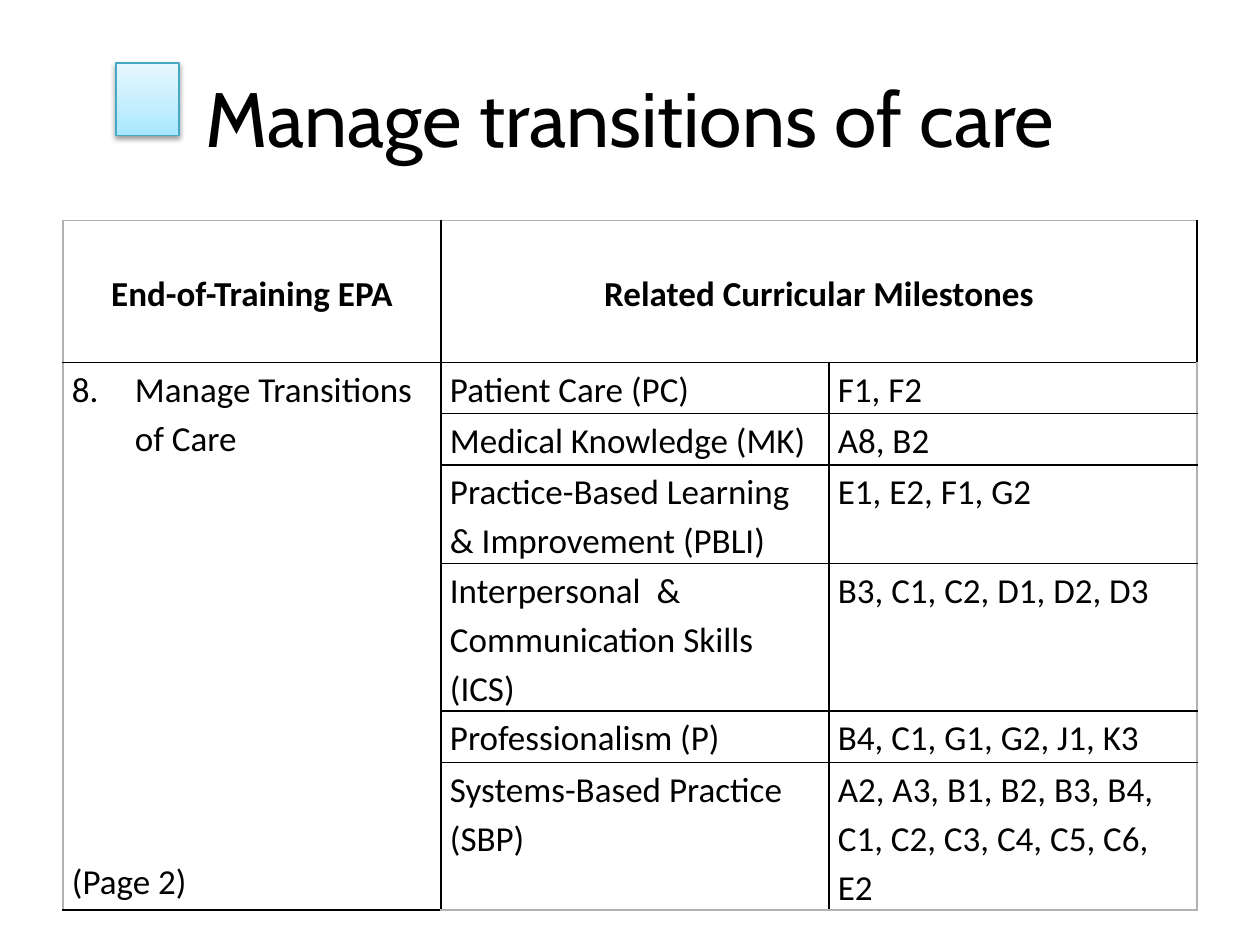
from dataclasses import dataclass

from pptx import Presentation
from pptx import util as u
from pptx.dml.color import RGBColor
from pptx.enum import shapes, text
from pptx.oxml import parse_xml
from pptx.oxml.ns import nsdecls

BLACK, GREY = "000000", "B2B2B2"
COLUMNS = (7.62, 7.82, 7.42)
HEADER_HEIGHT = 2.86
PAGE_NOTE_GAP = 225


@dataclass(frozen=True)
class Milestone:
    domain: str
    codes: str
    height: float


MILESTONES = (
    Milestone("Patient Care (PC)", "F1, F2", 1.03),
    Milestone("Medical Knowledge (MK)", "A8, B2", 1.03),
    Milestone("Practice-Based Learning  & Improvement (PBLI)", "E1, E2, F1, G2", 1.98),
    Milestone("Interpersonal  & Communication Skills (ICS)", "B3, C1, C2, D1, D2, D3", 2.97),
    Milestone("Professionalism (P)", "B4, C1, G1, G2, J1, K3", 1.03),
    Milestone("Systems-Based Practice (SBP)",
              "A2, A3, B1, B2, B3, B4, C1, C2, C3, C4, C5, C6, E2", 2.97),
)


def color(value: str) -> RGBColor:
    return RGBColor.from_string(value)


def set_all(obj, values: dict) -> None:
    for name, value in values.items():
        setattr(obj, name, value)


def write(p, words: str, size: float = 20, font: str = "Calibri", bold: bool = False) -> None:
    r = p.add_run()
    r.text = words
    set_all(r.font, {"size": u.Pt(size), "name": font, "bold": bold})
    r.font.color.rgb = color(BLACK)


def fill_cell(cell, words: str, bold: bool = False, align=text.PP_ALIGN.LEFT):
    p = cell.text_frame.paragraphs[0]
    set_all(p, {"alignment": align, "line_spacing": 1.15})
    write(p, words, bold=bold)
    return p


def frame_cell(cell, edges: dict) -> None:
    """Clear the fill and draw the four borders, given in schema order."""
    cell.fill.background()
    tc_pr = cell._tc.get_or_add_tcPr()
    for i, (side, line) in enumerate(edges.items()):
        tc_pr.insert(i, parse_xml(
            f'<a:ln{side} {nsdecls("a")} w="12700"><a:solidFill>'
            f'<a:srgbClr val="{line}"/></a:solidFill></a:ln{side}>'))


def add_marker(s) -> None:
    sp = s.shapes.add_shape(shapes.MSO_SHAPE.RECTANGLE,
                            u.Cm(2.34), u.Cm(1.27), u.Cm(1.27), u.Cm(1.47))
    sp.line.color.rgb = color("46AAC5")
    sp.line.width = u.Pt(0.75)
    stops = "".join(f'<a:gs pos="{pos * 1000}"><a:srgbClr val="{c}"/></a:gs>'
                    for pos, c in ((0, "A7E6FF"), (35, "C1EDFF"), (100, "E7F8FF")))
    # Three-stop gradient and soft shadow
    sp_pr = sp._element.spPr
    sp_pr.insert(2, parse_xml(
        f'<a:gradFill {nsdecls("a")}><a:gsLst>{stops}</a:gsLst>'
        '<a:lin ang="16200000" scaled="0"/></a:gradFill>'))
    sp_pr.append(parse_xml(
        f'<a:effectLst {nsdecls("a")}><a:outerShdw blurRad="{u.Pt(3.1)}" '
        f'dist="{u.Pt(1.6)}" dir="5400000" rotWithShape="0"><a:srgbClr val="{BLACK}">'
        '<a:alpha val="38000"/></a:srgbClr></a:outerShdw></a:effectLst>'))


def add_milestone_table(s) -> None:
    heights = [HEADER_HEIGHT] + [m.height for m in MILESTONES]
    last_row, last_col = len(heights) - 1, len(COLUMNS) - 1
    tbl = s.shapes.add_table(len(heights), len(COLUMNS), u.Cm(1.27), u.Cm(4.45),
                             u.Cm(sum(COLUMNS)), u.Cm(sum(heights))).table
    set_all(tbl, {"first_row": False, "horz_banding": False})
    for col, width in zip(tbl.columns, COLUMNS):
        col.width = u.Cm(width)

    # Grey outer frame, black inner rules
    for i, height in enumerate(heights):
        tbl.rows[i].height = u.Cm(height)
        for j in range(len(COLUMNS)):
            cell = tbl.cell(i, j)
            set_all(cell, {"margin_left": u.Cm(0.18), "margin_right": u.Cm(0.18),
                           "margin_top": 0, "margin_bottom": 0})
            outer = {"L": j == 0, "R": j == last_col, "T": i == 0, "B": i == last_row}
            frame_cell(cell, {side: GREY if out else BLACK for side, out in outer.items()})
    tbl.cell(0, 1).merge(tbl.cell(0, last_col))
    tbl.cell(1, 0).merge(tbl.cell(last_row, 0))

    # Header
    for j, words in enumerate(("End-of-Training EPA", "Related Curricular Milestones")):
        cell = tbl.cell(0, j)
        cell.vertical_anchor = text.MSO_ANCHOR.MIDDLE
        fill_cell(cell, words, True, text.PP_ALIGN.CENTER)

    # Numbered activity with its page note at the foot
    activity = tbl.cell(1, 0)
    p_pr = fill_cell(activity, "Manage Transitions of Care")._p.get_or_add_pPr()
    p_pr.set("marL", str(u.Cm(1.27)))
    p_pr.set("indent", str(-u.Cm(1.27)))
    p_pr.append(parse_xml(
        f'<a:buAutoNum {nsdecls("a")} type="arabicPeriod" startAt="8"/>'))
    note = activity.text_frame.add_paragraph()
    set_all(note, {"line_spacing": 1.15, "space_before": u.Pt(PAGE_NOTE_GAP)})
    write(note, "(Page 2)")

    # Milestones
    for i, m in enumerate(MILESTONES, 1):
        fill_cell(tbl.cell(i, 1), m.domain)
        fill_cell(tbl.cell(i, 2), m.codes)


def main() -> None:
    prs = Presentation()
    set_all(prs, {"slide_width": u.Cm(25.4), "slide_height": u.Cm(19.05)})
    s = prs.slides.add_slide(prs.slide_layouts[5])

    # Title
    title = s.shapes.title
    set_all(title, {"left": u.Cm(1.27), "top": u.Cm(0.76),
                    "width": u.Cm(22.86), "height": u.Cm(3.18)})
    tf = title.text_frame
    set_all(tf, {"vertical_anchor": text.MSO_ANCHOR.MIDDLE, "word_wrap": True})
    p = tf.paragraphs[0]
    p.alignment = text.PP_ALIGN.CENTER
    write(p, "Manage transitions of care", 44, "Cabin")

    add_marker(s)
    add_milestone_table(s)
    prs.save("out.pptx")


if __name__ == "__main__":
    main()
